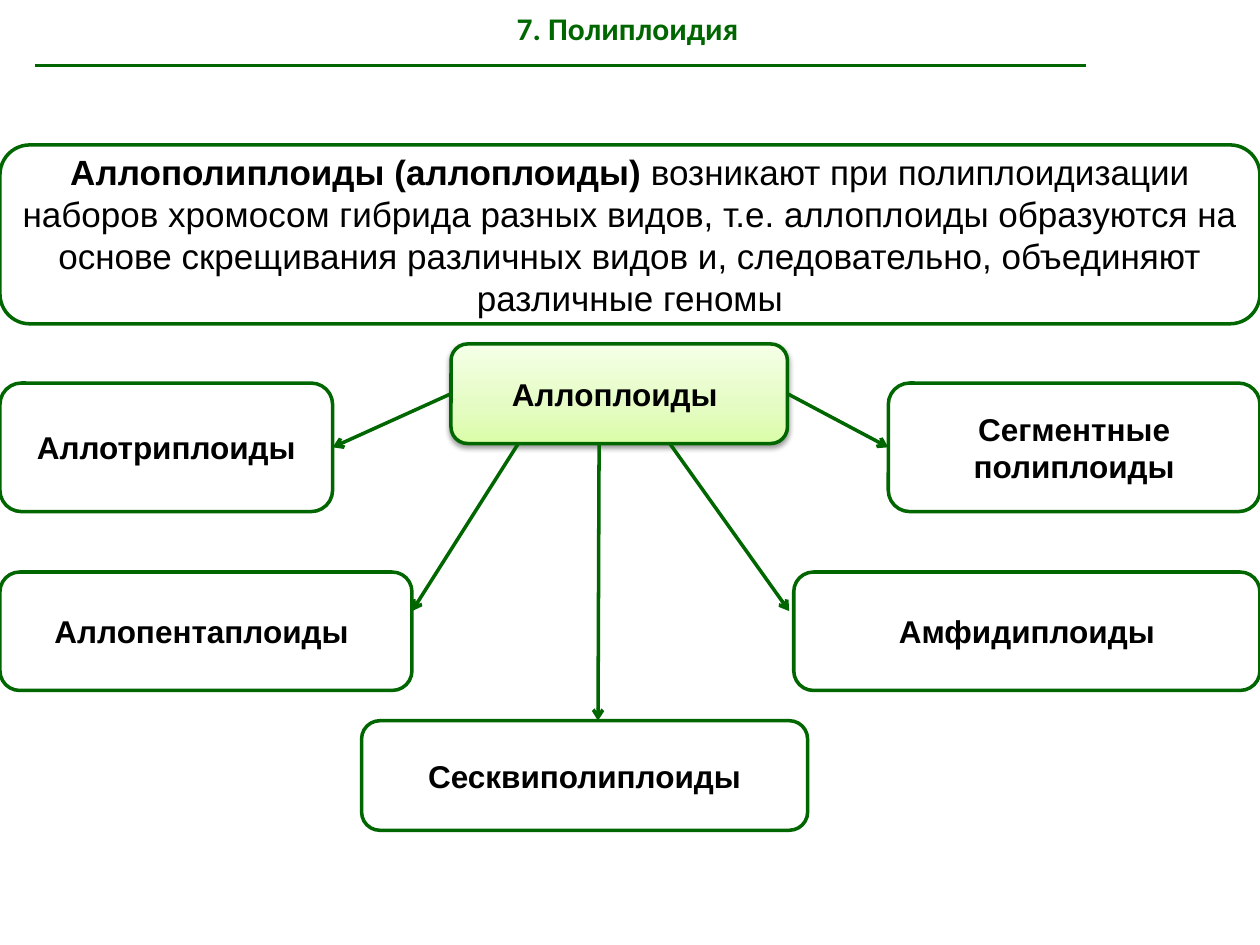
from collections import namedtuple
from copy import deepcopy

from lxml import etree
from pptx import Presentation
from pptx.dml.color import RGBColor
from pptx.enum.shapes import MSO_CONNECTOR, MSO_SHAPE
from pptx.enum.text import MSO_ANCHOR, PP_ALIGN
from pptx.oxml.ns import qn
from pptx.util import Inches, Pt

GREEN = RGBColor(0x00, 0x66, 0x00)
BLACK = RGBColor(0x00, 0x00, 0x00)
WHITE = RGBColor(0xFF, 0xFF, 0xFF)
HUB_STOPS = [
    (0, RGBColor(0xDA, 0xFD, 0xA7)),
    (0.35, RGBColor(0xE4, 0xFC, 0xC2)),
    (1, RGBColor(0xF5, 0xFF, 0xE7)),
]
ROUNDED = MSO_SHAPE.ROUNDED_RECTANGLE
STRAIGHT = MSO_CONNECTOR.STRAIGHT
CENTER = PP_ALIGN.CENTER
MIDDLE = MSO_ANCHOR.MIDDLE

COLUMNS, ROWS = 100, 75
SLIDE_WIDTH, SLIDE_HEIGHT = Inches(10), Inches(7.5)
TITLE_ONLY = 5

Box = namedtuple("Box", "left top width height")

TITLE = Box(5.1, 0, 90, 4.4)
DEFINITION = Box(0, 11.5, 100, 14.2)
HUB = Box(35.8, 27.3, 26.7, 7.9)
TRIPLOID = Box(0, 30.4, 26.4, 10.2)
SEGMENTAL = Box(70.5, 30.4, 29.5, 10.2)
PENTAPLOID = Box(0, 45.4, 32.7, 9.4)
AMPHIDIPLOID = Box(63, 45.4, 37, 9.4)
SESQUIPLOID = Box(28.7, 57.2, 35.4, 8.7)


def across(columns):
    return round(SLIDE_WIDTH * columns / COLUMNS)


def down(rows):
    return round(SLIDE_HEIGHT * rows / ROWS)


def placed(box):
    return across(box.left), down(box.top), across(box.width), down(box.height)


def point(box, share_across, share_down):
    return box.left + box.width * share_across, box.top + box.height * share_down


def write(frame, pieces, size, font="Arial", color=BLACK):
    frame.word_wrap = True
    frame.vertical_anchor = MIDDLE
    para = frame.paragraphs[0]
    para.alignment = CENTER
    for text, bold in pieces:
        span = para.add_run()
        span.text = text
        span.font.name = font
        span.font.size = Pt(size)
        span.font.bold = bold
        span.font.color.rgb = color


def add_card(page, box, pieces, size=18):
    card = page.shapes.add_shape(ROUNDED, *placed(box))
    card.fill.solid()
    card.fill.fore_color.rgb = WHITE
    card.line.color.rgb = GREEN
    card.line.width = Pt(2)
    card.shadow.inherit = False
    write(card.text_frame, pieces, size)
    return card


def add_line(page, start, end, arrow=True):
    line = page.shapes.add_connector(
        STRAIGHT, across(start[0]), down(start[1]), across(end[0]), down(end[1])
    )
    line.line.color.rgb = GREEN
    line.line.width = Pt(2)
    properties = line.element.spPr
    if arrow:
        etree.SubElement(properties.find(qn("a:ln")), qn("a:tailEnd"), type="arrow")
    etree.SubElement(properties, qn("a:effectLst"))


def add_heading(page, box):
    title = page.shapes.title
    title.left, title.top, title.width, title.height = placed(box)
    write(title.text_frame, [("7. Полиплоидия ", True)], 18, "Calibri", GREEN)
    add_line(page, (2.8, 5.2), (86.2, 5.2), arrow=False)


def add_definition(page, box):
    pieces = [
        ("Аллополиплоиды (аллоплоиды) ", True),
        ("возникают при полиплоидизации наборов хромосом гибрида разных видов, "
         "т.е. аллоплоиды образуются на основе скрещивания различных видов и, "
         "следовательно, объединяют различные геномы", False),
    ]
    add_card(page, box, pieces, 20)


def add_hub(page, box):
    hub = add_card(page, box, [("Аллоплоиды ", True)])
    hub.fill.gradient()
    hub.fill.gradient_angle = 90
    properties = hub.element.spPr
    stop_list = properties.find(".//" + qn("a:gsLst"))
    stop_list.append(deepcopy(stop_list[0]))
    for stop, (position, color) in zip(hub.fill.gradient_stops, HUB_STOPS):
        stop.position = position
        stop.color.rgb = color
    shadow = etree.SubElement(
        properties.find(qn("a:effectLst")), qn("a:outerShdw"),
        blurRad=str(Pt(3.1)), dist=str(Pt(1.6)), dir="5400000", rotWithShape="0",
    )
    shade = etree.SubElement(shadow, qn("a:srgbClr"), val=str(BLACK))
    etree.SubElement(shade, qn("a:alpha"), val="38000")


def add_kinds(page, hub):
    kinds = [
        ("Аллотриплоиды", TRIPLOID, (0, 0.5), (1, 0.5)),
        ("Сегментные полиплоиды", SEGMENTAL, (1, 0.5), (0, 0.5)),
        ("Аллопентаплоиды ", PENTAPLOID, (0.2, 1), (1, 0.33)),
        ("Амфидиплоиды", AMPHIDIPLOID, (0.65, 1), (-0.01, 0.33)),
        ("Сесквиполиплоиды", SESQUIPLOID, (0.44, 1), (0.53, 0)),
    ]
    for name, box, start, end in kinds:
        add_card(page, box, [(name, True)])
        add_line(page, point(hub, *start), point(box, *end))


def main():
    deck = Presentation()
    deck.slide_width, deck.slide_height = SLIDE_WIDTH, SLIDE_HEIGHT
    page = deck.slides.add_slide(deck.slide_layouts[TITLE_ONLY])
    add_heading(page, TITLE)
    add_definition(page, DEFINITION)
    add_hub(page, HUB)
    add_kinds(page, HUB)
    deck.save("out.pptx")


if __name__ == "__main__":
    main()
